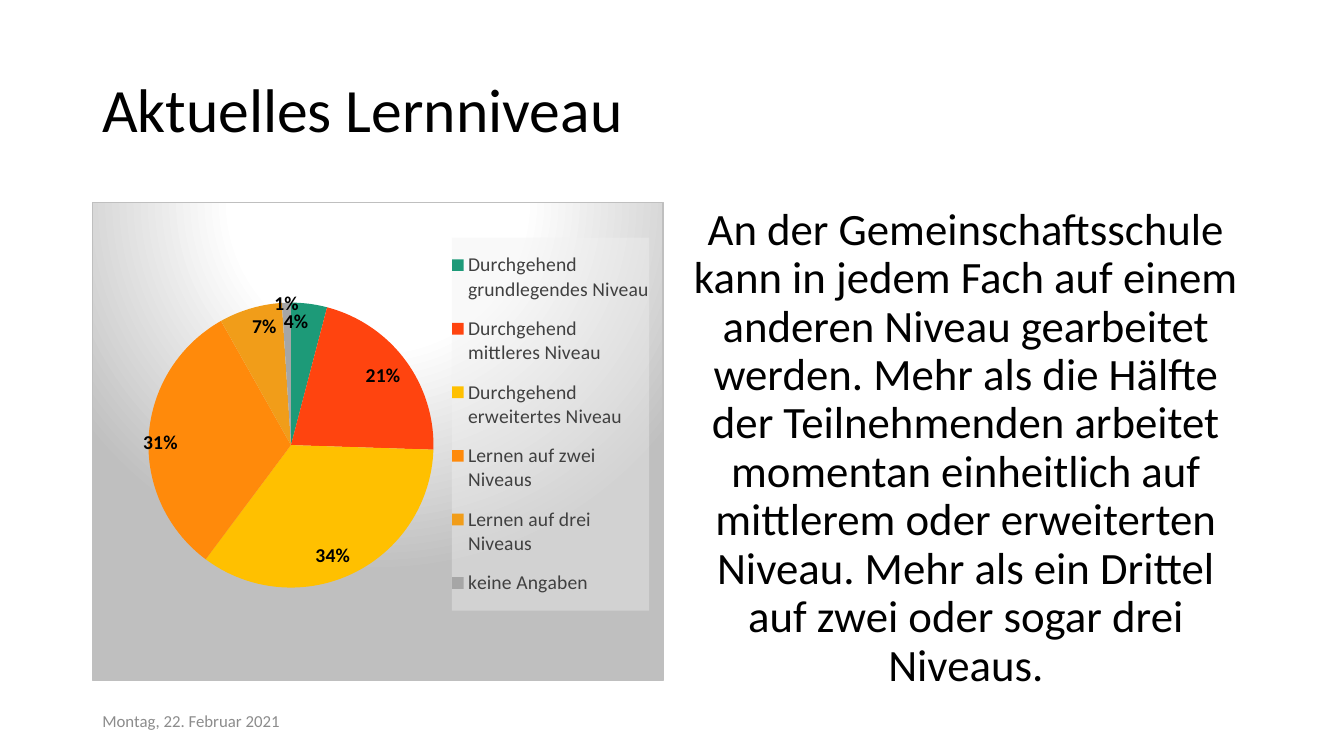
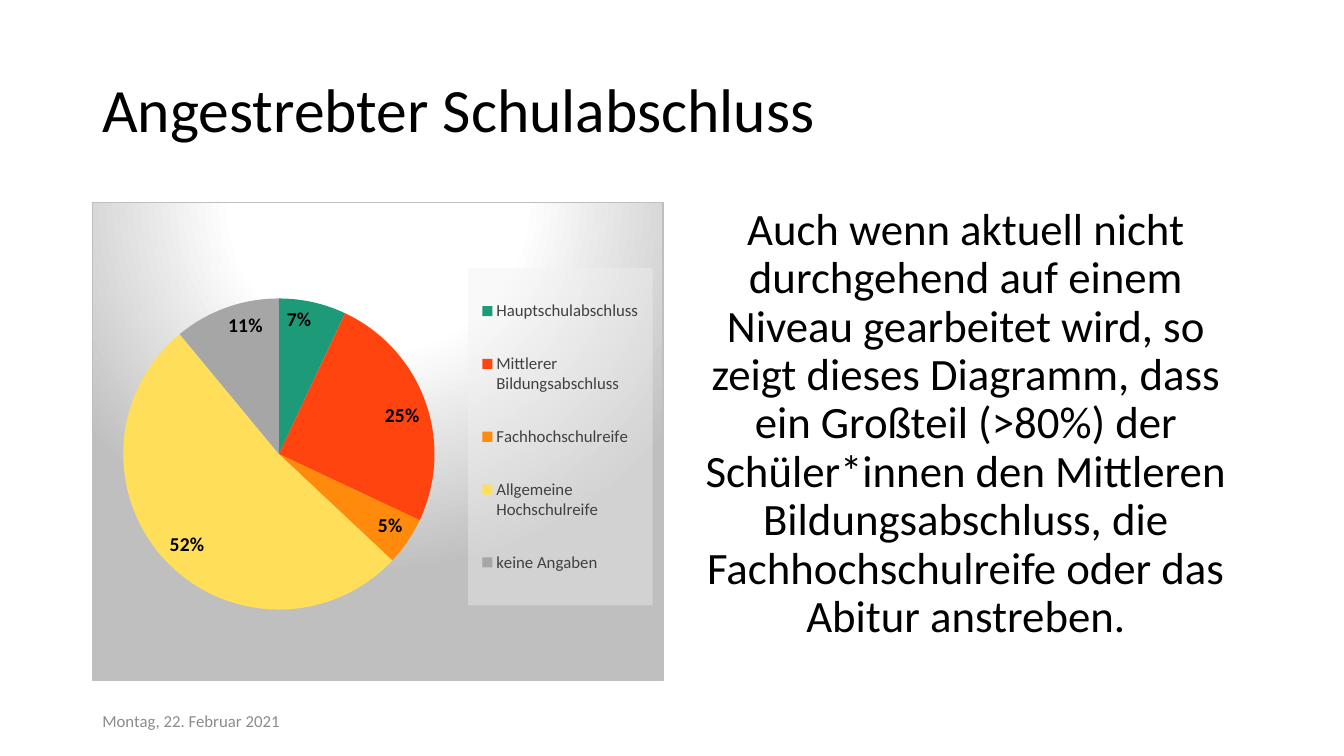
from dataclasses import dataclass
from typing import NamedTuple

from lxml import etree
from pptx import Presentation
from pptx.chart import data as cd
from pptx.dml.color import RGBColor
from pptx.enum import chart as ce, text as te
from pptx.util import Emu, Pt

PX = 9525
NS = 'xmlns:c="http://schemas.openxmlformats.org/drawingml/2006/chart" ' \
     'xmlns:a="http://schemas.openxmlformats.org/drawingml/2006/main"'


class Box(NamedTuple):
    x: int
    y: int
    w: int
    h: int

    def emu(self) -> list[Emu]:
        """Return the four lengths in EMU."""
        return [Emu(n * PX) for n in self]


@dataclass(frozen=True)
class Theme:
    font: str = "Calibri"
    ink: str = "000000"
    soft: str = "404040"
    mute: str = "8C8C8C"
    edge: str = "BFBFBF"
    pale: str = "F2F2F2"
    white: str = "FFFFFF"
    green: str = "1D9A78"
    red: str = "FF440F"
    amber: str = "FFC000"
    orange: str = "FF8A0B"
    ochre: str = "F19D19"
    lemon: str = "FFDF5A"
    grey: str = "A6A6A6"
    head: int = 44
    body: int = 32
    label: int = 14
    date: int = 12


T = Theme()
HEAD = Box(88, 38, 1104, 139)
BODY = Box(648, 192, 544, 457)
DATE = Box(88, 667, 288, 38)
CHART = Box(88, 192, 544, 457)


class Slice(NamedTuple):
    name: str
    value: int
    color: str
    dx: int = 0
    dy: int = 0


@dataclass(frozen=True)
class Page:
    title: str
    words: str
    pie: Box
    key: Box
    size: int
    slices: list[Slice]


PAGES = [
    Page("Aktuelles Lernniveau",
         "An der Gemeinschaftsschule kann in jedem Fach auf einem anderen Niveau "
         "gearbeitet werden. Mehr als die Hälfte der Teilnehmenden arbeitet momentan "
         "einheitlich auf mittlerem oder erweiterten Niveau. Mehr als ein Drittel auf "
         "zwei oder sogar drei Niveaus.",
         Box(53, 96, 272, 272), Box(355, 34, 188, 356), 14,
         [Slice("Durchgehend grundlegendes Niveau", 4, T.green),
          Slice("Durchgehend mittleres Niveau", 21, T.red),
          Slice("Durchgehend erweitertes Niveau", 34, T.amber),
          Slice("Lernen auf zwei Niveaus", 31, T.orange, -11, 6),
          Slice("Lernen auf drei Niveaus", 7, T.ochre),
          Slice("keine Angaben", 1, T.grey, 0, -16)]),
    Page("Angestrebter Schulabschluss",
         "Auch wenn aktuell nicht durchgehend auf einem Niveau gearbeitet wird, so zeigt "
         "dieses Diagramm, dass ein Großteil (>80%) der Schüler*innen den Mittleren "
         "Bildungsabschluss, die Fachhochschulreife oder das Abitur anstreben.",
         Box(29, 92, 297, 297), Box(358, 63, 176, 322), 12,
         [Slice("Hauptschulabschluss", 7, T.green),
          Slice("Mittlerer Bildungsabschluss", 25, T.red),
          Slice("Fachhochschulreife", 5, T.orange),
          Slice("Allgemeine Hochschulreife", 52, T.lemon),
          Slice("keine Angaben", 11, T.grey)]),
]


def style(font, size: int, color: str, bold: bool = False) -> None:
    """Set the theme font with a size, colour and weight."""
    font.name, font.size, font.bold = T.font, Pt(size), bold
    font.color.rgb = RGBColor.from_string(color)


def write(slide, box: Box, words: str, size: int, color: str, mid: bool = True):
    """Add a wrapped text box and return its paragraph."""
    frame = slide.shapes.add_textbox(*box.emu()).text_frame
    frame.word_wrap = True
    frame.vertical_anchor = te.MSO_ANCHOR.MIDDLE if mid else te.MSO_ANCHOR.TOP
    frame.text = words
    para = frame.paragraphs[0]
    style(para.runs[0].font, size, color)
    return para


def layout(box: Box, inner: bool = False):
    """Build a manual layout as fractions of the chart."""
    target = '<c:layoutTarget val="inner"/>' if inner else ""
    modes = '<c:xMode val="edge"/><c:yMode val="edge"/>'
    spans = zip("xywh", box, (CHART.w, CHART.h) * 2)
    sizes = "".join(f'<c:{k} val="{n / full:.4f}"/>' for k, n, full in spans)
    return etree.fromstring(f"<c:layout {NS}><c:manualLayout>{target}{modes}{sizes}"
                            "</c:manualLayout></c:layout>")


def shift(item: Slice):
    """Build a layout that moves a label from its usual place."""
    return etree.fromstring(
        f'<c:layout {NS}><c:manualLayout><c:x val="{item.dx / CHART.w:.4f}"/>'
        f'<c:y val="{item.dy / CHART.h:.4f}"/></c:manualLayout></c:layout>')


def paint(fill: str, line: str):
    """Build chart shape properties from a fill and a line."""
    return etree.fromstring(f"<c:spPr {NS}>{fill}{line}</c:spPr>")


def backdrop():
    """Build the round gradient behind a chart."""
    stops = "".join(f'<a:gs pos="{at * 1000}"><a:srgbClr val="{color}"/></a:gs>'
                    for at, color in ((0, T.white), (39, T.white), (100, T.edge)))
    return paint(f'<a:gradFill><a:gsLst>{stops}</a:gsLst><a:path path="circle">'
                 '<a:fillToRect l="50000" t="-80000" r="50000" b="180000"/>'
                 '</a:path></a:gradFill>',
                 f'<a:ln w="9525"><a:solidFill><a:srgbClr val="{T.edge}"/>'
                 '</a:solidFill></a:ln>')


def veil():
    """Build the clear fill behind a legend."""
    return paint(f'<a:solidFill><a:srgbClr val="{T.pale}"><a:alpha val="39000"/>'
                 '</a:srgbClr></a:solidFill>', "<a:ln><a:noFill/></a:ln>")


def draw_pie(slide, page: Page) -> None:
    """Draw the pie chart with its legend and labels."""
    data = cd.CategoryChartData(number_format='0"%"')
    data.categories = [item.name for item in page.slices]
    data.add_series("Series 1", [item.value for item in page.slices])
    chart = slide.shapes.add_chart(ce.XL_CHART_TYPE.PIE, *CHART.emu(), data).chart
    style(chart.font, 10, T.ink)
    chart.has_title = False
    root = chart.element
    root.find("{*}chart").addnext(backdrop())
    area = root.find(".//{*}plotArea")
    for old in area.findall("{*}layout"):
        area.remove(old)
    area.insert(0, layout(page.pie, True))

    chart.has_legend = True
    key = chart.legend
    key.position = ce.XL_LEGEND_POSITION.RIGHT
    key.include_in_layout = False
    style(key.font, page.size, T.soft)
    over = root.find(".//{*}legend/{*}overlay")
    for old in over.getparent().findall("{*}layout"):
        over.getparent().remove(old)
    over.addprevious(layout(page.key))
    over.addnext(veil())

    plot = chart.plots[0]
    plot.vary_by_categories = True
    row = plot.series[0]
    tags = row.data_labels
    tags.show_value = True
    tags.position = ce.XL_LABEL_POSITION.INSIDE_END
    style(tags.font, T.label, T.ink, True)
    for i, item in enumerate(page.slices):
        point = row.points[i]
        point.format.fill.solid()
        point.format.fill.fore_color.rgb = RGBColor.from_string(item.color)
        if item.dx or item.dy:
            tag = point.data_label
            tag.position = ce.XL_LABEL_POSITION.INSIDE_END
            style(tag.font, T.label, T.ink, True)
            mark = root.find(f".//{{*}}dLbl/{{*}}idx[@val='{i}']")
            mark.addnext(shift(item))


def draw(slide, page: Page) -> None:
    """Draw one page."""
    write(slide, HEAD, page.title, T.head, T.ink).line_spacing = 0.9
    para = write(slide, BODY, page.words, T.body, T.ink, False)
    para.alignment = te.PP_ALIGN.CENTER
    para.line_spacing, para.space_before = 0.9, Pt(10)
    write(slide, DATE, "Montag, 22. Februar 2021", T.date, T.mute)
    draw_pie(slide, page)


def main() -> None:
    """Build and save the deck."""
    deck = Presentation()
    deck.slide_width, deck.slide_height = Emu(1280 * PX), Emu(720 * PX)
    for page in PAGES:
        draw(deck.slides.add_slide(deck.slide_layouts[6]), page)
    deck.save("out.pptx")


if __name__ == "__main__":
    main()
